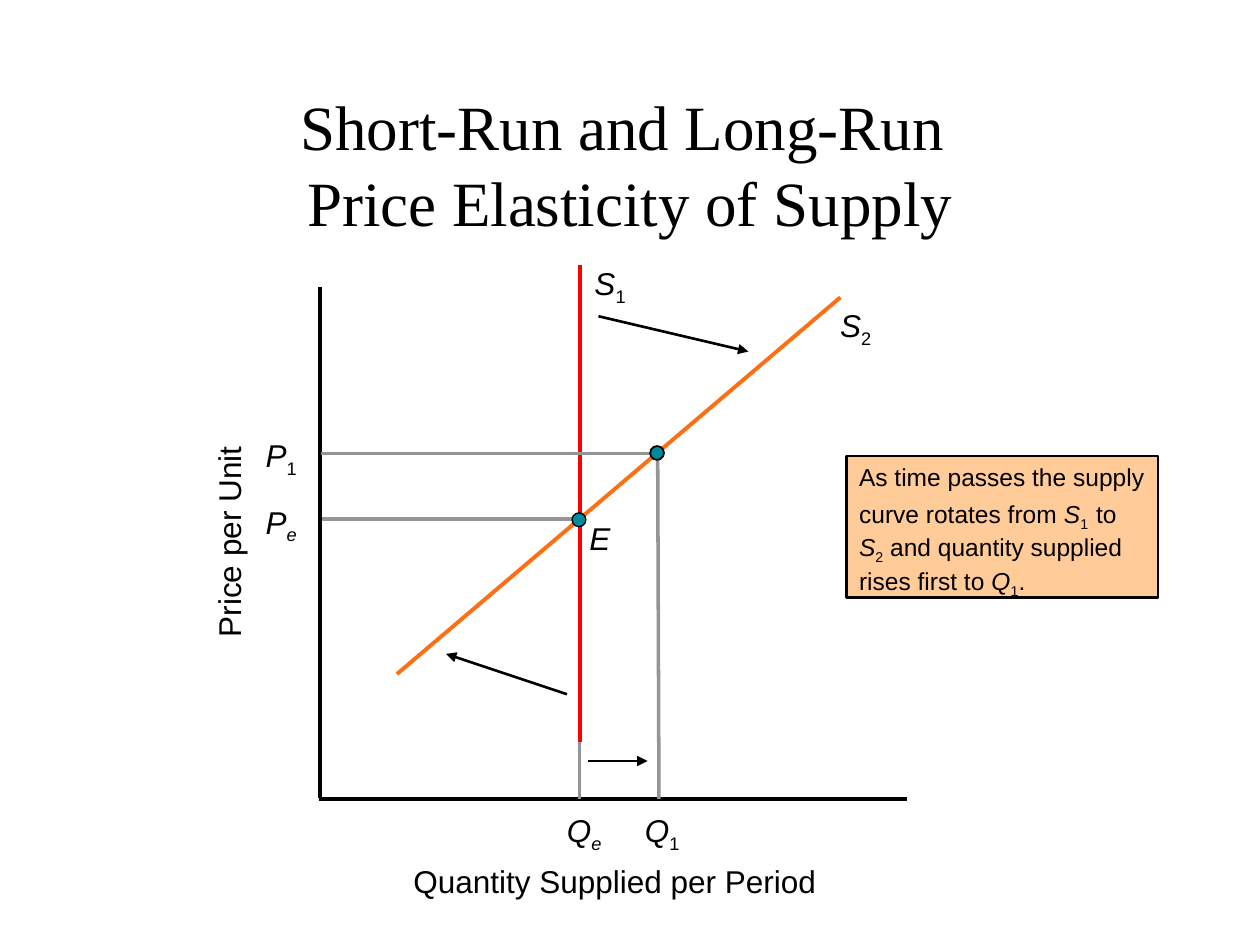
import pptx
import pptx.util
import pptx.dml.color
import pptx.enum.shapes
import pptx.enum.text
import pptx.oxml
import pptx.oxml.ns
from pptx.util import Inches

RGBColor = pptx.dml.color.RGBColor
BLACK = RGBColor(0x00, 0x00, 0x00)
GRAY = RGBColor(0x93, 0x95, 0x98)
RED = RGBColor(0xFF, 0x00, 0x00)
ORANGE = RGBColor(0xFE, 0x6E, 0x13)
PEACH = RGBColor(0xFF, 0xCC, 0x99)
TEAL = RGBColor(0x00, 0x88, 0x9B)

SHAPES = pptx.enum.shapes.MSO_SHAPE
ANCHOR = pptx.enum.text.MSO_ANCHOR
ALIGN = pptx.enum.text.PP_ALIGN


class SlideBuilder:
    """Holds the text style and the slide being drawn."""

    font = "Arial"
    size = 18
    title_font = "Times New Roman"

    def __init__(self, slide):
        self.slide = slide

    def add_run(self, paragraph, text, italic=False, subscript=False, size=None, font=None):
        run = paragraph.add_run()
        run.text = text
        run.font.name = font or self.font
        run.font.size = pptx.util.Pt(size or self.size)
        run.font.color.rgb = BLACK
        run.font.italic = italic
        if subscript:
            run.font._element.set("baseline", "-25000")

    def text_box(self, left, top, width, height, wrap=True, align=ALIGN.CENTER):
        box = self.slide.shapes.add_textbox(
            Inches(left), Inches(top), Inches(width), Inches(height))
        box.text_frame.word_wrap = wrap
        box.text_frame.paragraphs[0].alignment = align
        return box

    def title(self, left, top, width, height, lines):
        frame = self.text_box(left, top, width, height).text_frame
        frame.vertical_anchor = ANCHOR.MIDDLE
        paragraph = frame.paragraphs[0]
        for index, line in enumerate(lines):
            if index:
                paragraph.add_line_break()
            self.add_run(paragraph, line, size=36, font=self.title_font)

    def axis_title(self, left, top, width, text, rotation=0):
        box = self.text_box(left, top, width, 0.4)
        box.rotation = rotation
        self.add_run(box.text_frame.paragraphs[0], text)

    def symbol(self, left, top, width, letter, index="", index_italic=False):
        box = self.text_box(left, top, width, 0.4, wrap=False, align=ALIGN.LEFT)
        paragraph = box.text_frame.paragraphs[0]
        self.add_run(paragraph, letter, italic=True)
        if index:
            self.add_run(paragraph, index, italic=index_italic, subscript=True)

    def line(self, start, end, color, weight, arrow=False):
        connector = self.slide.shapes.add_connector(
            pptx.enum.shapes.MSO_CONNECTOR.STRAIGHT,
            *(Inches(value) for value in (*start, *end)))
        connector.line.color.rgb = color
        connector.line.width = pptx.util.Pt(weight)
        if arrow:
            head = pptx.oxml.parse_xml(
                "<a:tailEnd %s type='triangle'/>" % pptx.oxml.ns.nsdecls("a"))
            connector.line._get_or_add_ln().append(head)
        connector._element.spPr.append(pptx.oxml.parse_xml(
            "<a:effectLst %s/>" % pptx.oxml.ns.nsdecls("a")))

    def filled_shape(self, kind, left, top, width, height, fill, weight):
        shape = self.slide.shapes.add_shape(
            kind, Inches(left), Inches(top), Inches(width), Inches(height))
        shape.shadow.inherit = False
        shape.fill.solid()
        shape.fill.fore_color.rgb = fill
        shape.line.color.rgb = BLACK
        shape.line.width = pptx.util.Pt(weight)
        return shape

    def point(self, left, top, weight):
        self.filled_shape(SHAPES.OVAL, left, top, 0.11, 0.11, TEAL, weight)

    def note(self, left, top, width, height, runs):
        shape = self.filled_shape(SHAPES.RECTANGLE, left, top, width, height, PEACH, 1.5)
        frame = shape.text_frame
        frame.word_wrap = True
        frame.vertical_anchor = ANCHOR.TOP
        paragraph = frame.paragraphs[0]
        paragraph.alignment = ALIGN.LEFT
        for text, style in runs:
            self.add_run(paragraph, text, **{"size": 14, **style})


def main():
    presentation = pptx.Presentation()
    presentation.slide_width = Inches(10)
    presentation.slide_height = Inches(7.5)
    slide = presentation.slides.add_slide(presentation.slide_layouts[6])
    builder = SlideBuilder(slide)

    builder.title(0.75, 0.67, 8.5, 1.25,
                  ["Short-Run and Long-Run ", "Price Elasticity of Supply"])

    # Axes and the equilibrium guides
    builder.line((2.55, 4.12), (4.56, 4.12), GRAY, 2)
    builder.line((2.54, 2.28), (2.54, 6.33), BLACK, 2)
    builder.line((2.53, 6.34), (7.2, 6.34), BLACK, 2)
    builder.symbol(2.01, 3.94, 0.46, "P", "e", index_italic=True)
    builder.symbol(4.4, 6.39, 0.49, "Q", "e", index_italic=True)
    builder.line((4.6, 5.58), (4.6, 6.34), GRAY, 2)
    builder.axis_title(-0.21, 4.1, 4.05, "Price per Unit", rotation=270)
    builder.axis_title(2.56, 6.79, 4.64, "Quantity Supplied per Period")

    # Supply curves and the rotation arrows
    builder.line((4.6, 2.1), (4.6, 5.89), RED, 2.25)
    builder.symbol(4.62, 2.05, 0.46, "S", "1")
    builder.line((4.5, 5.51), (3.54, 5.19), BLACK, 1.5, arrow=True)
    builder.line((3.15, 5.35), (6.67, 2.36), ORANGE, 2.25)
    builder.symbol(6.57, 2.38, 0.46, "S", "2")
    builder.line((4.75, 2.51), (5.94, 2.79), BLACK, 1.5, arrow=True)
    builder.line((4.67, 6.04), (5.14, 6.04), BLACK, 1.5, arrow=True)

    # Explanation
    italic, subscript = {"italic": True}, {"subscript": True}
    builder.note(6.72, 3.62, 2.47, 1.12, [
        ("As time passes the supply curve rotates from ", {}),
        ("S", italic), ("1", subscript),
        (" ", {"italic": True, "size": 18, "font": builder.title_font}),
        ("to ", {}),
        ("S", italic), ("2", subscript),
        (" and quantity supplied rises first to ", {}),
        ("Q", italic), ("1", subscript), (".", {}),
    ])

    # Equilibrium point
    builder.point(4.54, 4.07, 0.75)
    builder.symbol(4.58, 4.07, 0.37, "E")

    # New price and quantity
    builder.line((2.55, 3.6), (5.2, 3.6), GRAY, 2)
    builder.symbol(2.01, 3.41, 0.46, "P", "1")
    builder.symbol(5.02, 6.39, 0.49, "Q", "1")
    builder.line((5.22, 3.6), (5.23, 6.34), GRAY, 2)
    builder.point(5.16, 3.54, 1)

    presentation.save("out.pptx")


if __name__ == "__main__":
    main()
